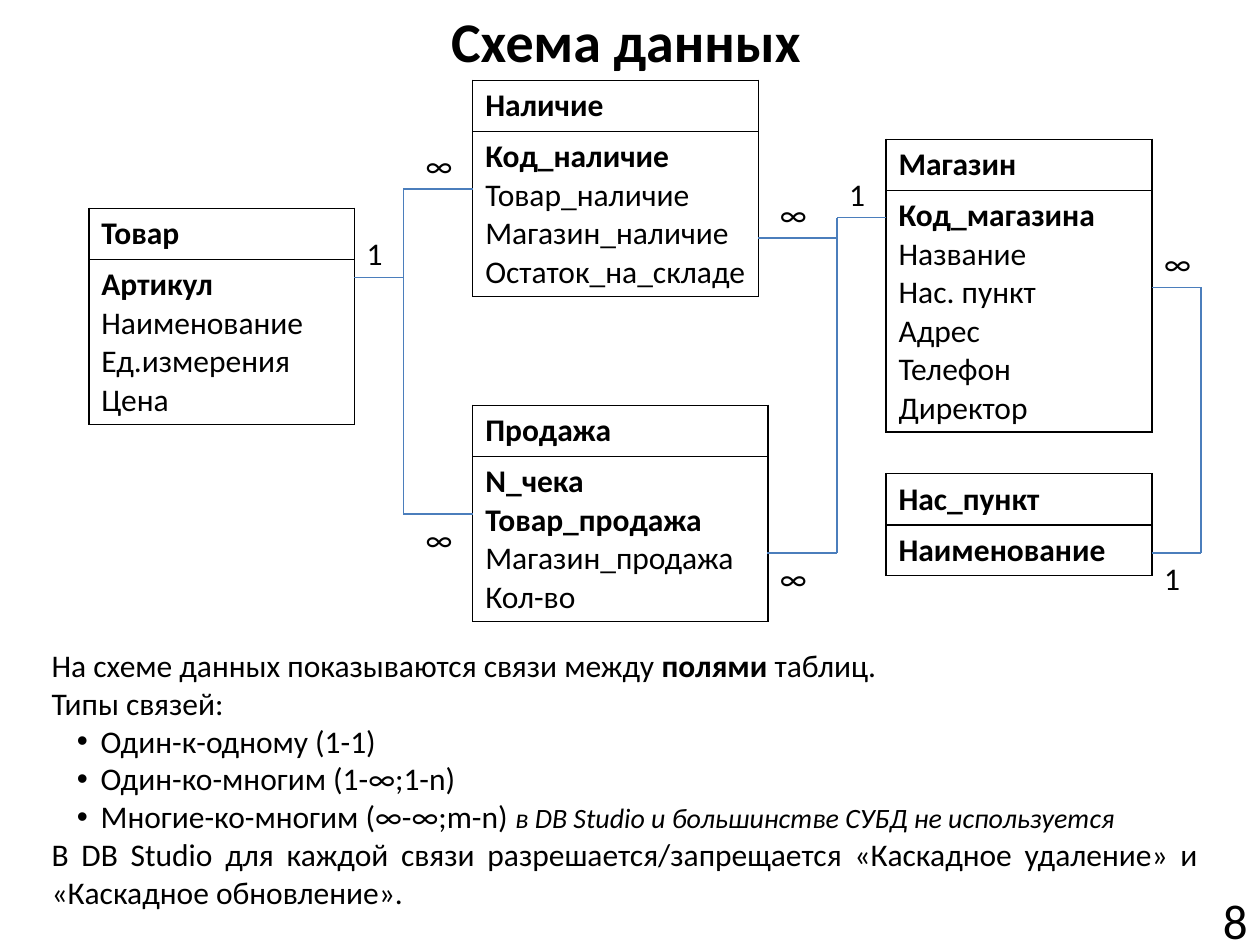
"""Build the slide with a relational data schema and the types of relations."""
import pptx
import pptx.dml.color
import pptx.enum.shapes
import pptx.enum.text
import pptx.oxml
import pptx.oxml.ns
import pptx.util
from lxml import etree

Cm = pptx.util.Cm
Pt = pptx.util.Pt
Align = pptx.enum.text.PP_ALIGN
Anchor = pptx.enum.text.MSO_ANCHOR
BLACK = pptx.dml.color.RGBColor(0x00, 0x00, 0x00)
BLUE = pptx.dml.color.RGBColor(0x4B, 0x7E, 0xBC)

PLAIN = {"name": "Calibri", "size": Pt(18), "bold": False, "italic": False}
BOLD = {**PLAIN, "bold": True}
NOTE = {**PLAIN, "size": Pt(16), "italic": True}
TITLE = {**BOLD, "size": Pt(32)}
NUMBER = {**PLAIN, "size": Pt(28)}

HEADER_HEIGHT = 1.03
LINE_HEIGHT = 0.77
CELL_PADDING = 0.25


def write_paragraphs(text_frame, paragraphs, alignment=Align.LEFT):
    for index, runs in enumerate(paragraphs):
        paragraph = text_frame.paragraphs[0] if index == 0 else text_frame.add_paragraph()
        paragraph.alignment = alignment
        for text, values in runs:
            run = paragraph.add_run()
            run.text = text
            for name, value in values.items():
                setattr(run.font, name, value)
            run.font.color.rgb = BLACK


def add_text(slide, box, paragraphs, alignment=Align.LEFT, anchor=Anchor.TOP):
    text_frame = slide.shapes.add_textbox(*map(Cm, box)).text_frame
    frame_values = {"word_wrap": True, "vertical_anchor": anchor}
    for name, value in frame_values.items():
        setattr(text_frame, name, value)
    write_paragraphs(text_frame, paragraphs, alignment)
    return text_frame


presentation = pptx.Presentation()
presentation.slide_width = Cm(25.4)
presentation.slide_height = Cm(19.05)
slide = presentation.slides.add_slide(presentation.slide_layouts[6])

add_text(slide, (1.19, 0, 22.86, 2.39), [[("Схема данных", TITLE)]], Align.CENTER)
add_text(slide, (22.81, 18.06, 2.59, 0.99), [[("8", NUMBER)]], Align.RIGHT, Anchor.MIDDLE)

entities = [
    ("Товар", 1.79, 4.2, 5.36, ["Артикул"],
     ["Наименование", "Ед.измерения", "Цена"]),
    ("Магазин", 17.86, 2.81, 5.36, ["Код_магазина"],
     ["Название", "Нас. пункт", "Адрес", "Телефон", "Директор"]),
    ("Нас_пункт", 17.86, 9.55, 5.36, ["Наименование"], []),
    ("Наличие", 9.53, 1.62, 5.76, ["Код_наличие"],
     ["Товар_наличие", "Магазин_наличие", "Остаток_на_складе"]),
    ("Продажа", 9.53, 8.17, 5.95, ["N_чека", "Товар_продажа"],
     ["Магазин_продажа", "Кол-во"]),
]
for entity, left, top, width, keys, fields in entities:
    fields_height = CELL_PADDING + LINE_HEIGHT * len(keys + fields)
    table = slide.shapes.add_table(
        2, 1, Cm(left), Cm(top), Cm(width), Cm(HEADER_HEIGHT + fields_height)).table
    for name, value in {"first_row": False, "horz_banding": False}.items():
        setattr(table, name, value)
    field_lines = [[(key, BOLD)] for key in keys] + [[(field, PLAIN)] for field in fields]
    contents = [[[(entity, BOLD)]], field_lines]
    for row, height, lines in zip(table.rows, (HEADER_HEIGHT, fields_height), contents):
        row.height = Cm(height)
        cell = row.cells[0]
        write_paragraphs(cell.text_frame, lines)
        properties = cell._tc.get_or_add_tcPr()
        for side in ("lnL", "lnR", "lnT", "lnB"):
            properties.append(pptx.oxml.parse_xml(
                f'<a:{side} {pptx.oxml.ns.nsdecls("a")} w="12700"><a:solidFill>'
                f'<a:srgbClr val="{BLACK}"/></a:solidFill></a:{side}>'))
        cell.fill.background()

relations = [
    [(7.14, 5.59), (8.13, 5.59), (8.13, 10.36), (9.53, 10.36)],
    [(8.13, 5.59), (8.13, 3.81), (9.53, 3.81)],
    [(17.86, 4.39), (16.87, 4.39), (16.87, 11.15), (15.47, 11.15)],
    [(15.29, 4.8), (16.87, 4.8)],
    [(23.22, 5.79), (24.21, 5.79), (24.21, 11.15), (23.22, 11.15)],
]
for route in relations:
    for start, end in zip(route, route[1:]):
        connector = slide.shapes.add_connector(
            pptx.enum.shapes.MSO_CONNECTOR.STRAIGHT, *map(Cm, start + end))
        connector.line.width = Pt(0.75)
        connector.line.color.rgb = BLUE
        etree.SubElement(connector._element.spPr, pptx.oxml.ns.qn("a:effectLst"))

cardinalities = {
    "1": [(7.14, 4.6), (16.87, 3.4), (23.22, 11.15)],
    "∞": [(23.22, 4.8), (15.47, 11.15), (8.33, 10.36), (8.33, 2.81), (15.47, 3.81)],
}
for symbol, places in cardinalities.items():
    for left, top in places:
        add_text(slide, (left, top, 1.19, 1.02), [[(symbol, PLAIN)]])

explanation = add_text(slide, (0.79, 12.9, 23.62, 5.64), [
    [("На схеме данных показываются связи между ", PLAIN), ("полями", BOLD),
     (" таблиц.", PLAIN)],
    [("Типы связей:", PLAIN)],
    [("Один-к-одному (1-1)", PLAIN)],
    [("Один-ко-многим (1-∞;1-n)", PLAIN)],
    [("Многие-ко-многим (∞-∞;m-n) ", PLAIN),
     ("в DB Studio и большинстве СУБД не используется", NOTE)],
    [("В DB Studio для каждой связи разрешается/запрещается «Каскадное удаление» "
      "и «Каскадное обновление».", PLAIN)],
], Align.JUSTIFY)
for paragraph in explanation.paragraphs[2:5]:
    paragraph.level = 1
    properties = paragraph._p.get_or_add_pPr()
    for name, value in {"marL": Cm(0.99), "indent": -Cm(0.48)}.items():
        properties.set(name, str(value))
    etree.SubElement(properties, pptx.oxml.ns.qn("a:buFont"), typeface="Arial")
    etree.SubElement(properties, pptx.oxml.ns.qn("a:buChar"), char="•")

presentation.save("out.pptx")
